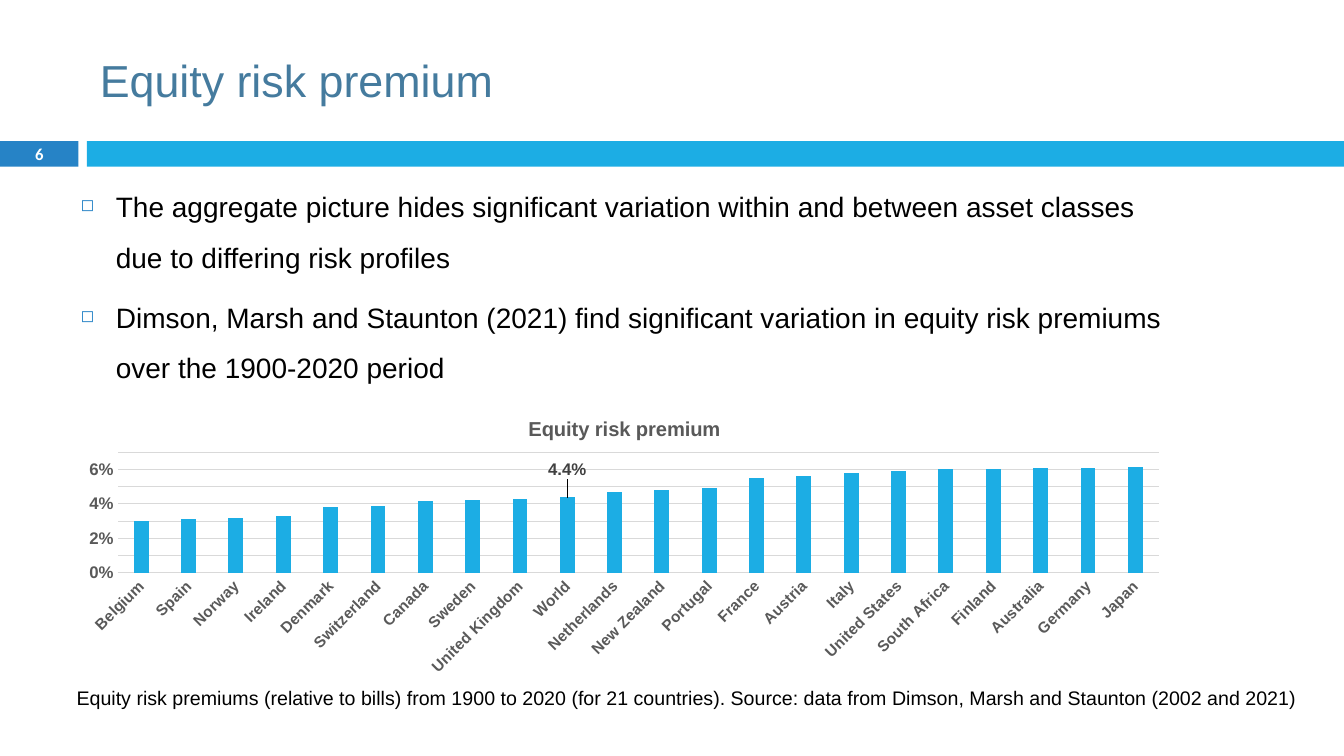
from copy import deepcopy
from lxml.etree import fromstring
from pptx import Presentation
from pptx.chart.data import CategoryChartData
from pptx.dml.color import RGBColor
from pptx.enum.chart import XL_CHART_TYPE as ChartType, XL_LABEL_POSITION as LabelPosition, XL_TICK_MARK as TickMark
from pptx.enum.shapes import MSO_SHAPE as Shape
from pptx.enum.text import MSO_ANCHOR as Anchor, PP_ALIGN as Align
from pptx.oxml import parse_xml
from pptx.oxml.ns import nsdecls, qn
from pptx.util import Cm, Pt

COLORS = {
    "title": "457B9E", "number": "2683C6", "accent": "1CADE4",
    "text": "000000", "white": "FFFFFF", "muted": "595959",
    "label": "404040", "grid": "D9D9D9",
}
BULLETS = [
    "The aggregate picture hides significant variation within and between asset classes due to differing risk profiles",
    "Dimson, Marsh and Staunton (2021) find significant variation in equity risk premiums over the 1900-2020 period",
]
PREMIUMS = {
    "Belgium": 0.03, "Spain": 0.031, "Norway": 0.032, "Ireland": 0.033,
    "Denmark": 0.038, "Switzerland": 0.039, "Canada": 0.042, "Sweden": 0.0421,
    "United Kingdom": 0.043, "World": 0.044, "Netherlands": 0.047,
    "New Zealand": 0.048, "Portugal": 0.049, "France": 0.055, "Austria": 0.056,
    "Italy": 0.058, "United States": 0.059, "South Africa": 0.06,
    "Finland": 0.0605, "Australia": 0.0608, "Germany": 0.061, "Japan": 0.0612,
}
LEADER_LINES = (
    '<c:extLst xmlns:c="http://schemas.openxmlformats.org/drawingml/2006/chart">'
    '<c:ext uri="{CE6537A1-D6FC-4f65-9D91-7224C49458BB}" '
    'xmlns:c15="http://schemas.microsoft.com/office/drawing/2012/chart">'
    '<c15:showLeaderLines val="1"/></c:ext></c:extLst>'
)


class SlideBuilder:
    """Hold the style and the current slide."""

    def __init__(self, presentation, font="Arial"):
        """Add a title-only slide to the presentation."""
        self.slide = presentation.slides.add_slide(presentation.slide_layouts[5])
        self.font = font

    def color(self, name):
        """Return a named colour."""
        return RGBColor.from_string(COLORS[name])

    def style(self, font, size, color, bold=False, name=None):
        """Format a font."""
        font.name = name or self.font
        font.size = Pt(size)
        font.bold = bold
        font.color.rgb = self.color(color)

    def place(self, shape, box):
        """Move and size a shape to a box in centimetres."""
        shape.left, shape.top, shape.width, shape.height = map(Cm, box)

    def title(self, text, box):
        """Fill the title placeholder."""
        title = self.slide.shapes.title
        self.place(title, box)
        title.text_frame.text = text
        title.text_frame.vertical_anchor = Anchor.MIDDLE
        paragraph = title.text_frame.paragraphs[0]
        paragraph.alignment = Align.LEFT
        self.style(paragraph.runs[0].font, 32, "title")

    def bar(self, box, color):
        """Add a plain filled rectangle."""
        shape = self.slide.shapes.add_shape(Shape.RECTANGLE, *map(Cm, box))
        shape.shadow.inherit = False
        shape.fill.solid()
        shape.fill.fore_color.rgb = self.color(color)
        shape.line.fill.background()

    def text(self, text, box, size, color="text", bold=False, name=None,
             align=Align.LEFT, anchor=Anchor.TOP, wrap=True):
        """Add a text box and return its frame."""
        frame = self.slide.shapes.add_textbox(*map(Cm, box)).text_frame
        frame.word_wrap = wrap
        frame.vertical_anchor = anchor
        frame.text = text
        for paragraph in frame.paragraphs:
            paragraph.alignment = align
            self.style(paragraph.runs[0].font, size, color, bold, name)
        return frame

    def bullets(self, items, box):
        """Add a bulleted list."""
        for paragraph in self.text("\n".join(items), box, 20).paragraphs:
            paragraph.line_spacing = 1.5
            paragraph.space_before = Pt(7)
            properties = paragraph._p.get_or_add_pPr()
            properties.set("marL", str(Cm(0.89)))
            properties.set("indent", str(-Cm(0.89)))
            for element in (
                f'<a:buClr {nsdecls("a")}><a:srgbClr val="{COLORS["number"]}"/></a:buClr>',
                f'<a:buSzPct {nsdecls("a")} val="60000"/>',
                f'<a:buChar {nsdecls("a")} char="◻"/>',
            ):
                properties.append(fromstring(element))

    def chart(self, name, values, box, labelled):
        """Add a column chart with one labelled category."""
        data = CategoryChartData(number_format="0.0%")
        data.categories = list(values)
        data.add_series(name, list(values.values()))
        chart = self.slide.shapes.add_chart(
            ChartType.COLUMN_CLUSTERED, *map(Cm, box), data).chart
        self.style(chart.font, 12, "text", True)
        chart.has_legend = False
        chart.has_title = True
        chart.chart_title.text_frame.text = name
        heading = chart.chart_title.text_frame.paragraphs[0].runs[0]
        self.style(heading.font, 14.4, "muted", True)
        plot = chart.plots[0]
        plot.gap_width, plot.overlap, plot.vary_by_categories = 219, -27, False
        series = plot.series[0]
        series.format.fill.solid()
        series.format.fill.fore_color.rgb = self.color("accent")
        self.axes(chart)
        self.layout(chart._chartSpace.chart.plotArea, 0, x=0.045, y=0.18, w=0.935, h=0.432)
        self.point_label(series, list(values).index(labelled))

    def axes(self, chart):
        """Format both axes of a chart."""
        category, value = chart.category_axis, chart.value_axis
        for axis, size in ((category, 11), (value, 12)):
            axis.major_tick_mark = axis.minor_tick_mark = TickMark.NONE
            self.style(axis.tick_labels.font, size, "muted", True)
        category.format.line.color.rgb = self.color("grid")
        category.format.line.width = Pt(0.75)
        category._element.find(qn("c:txPr")).find(qn("a:bodyPr")).set("rot", "-2700000")
        value.format.line.fill.background()
        value.minimum_scale, value.maximum_scale = 0, 0.07
        value.major_unit, value.minor_unit = 0.02, 0.01
        value.tick_labels.number_format = "0%"
        value.tick_labels.number_format_is_linked = False
        value.has_major_gridlines = value.has_minor_gridlines = True
        line = value.major_gridlines.format.line
        line.color.rgb = self.color("grid")
        line.width = Pt(0.75)
        major, minor = (value._element.find(qn(f"c:{kind}Gridlines")) for kind in ("major", "minor"))
        minor.append(deepcopy(major.find(qn("c:spPr"))))

    def layout(self, parent, position, **fractions):
        """Give a chart part a manual layout."""
        inner = '<c:layoutTarget val="inner"/>' if "w" in fractions else ""
        modes = "".join(f'<c:{key}Mode val="edge"/>' for key in "xy") if inner else ""
        sizes = "".join(f'<c:{key} val="{part}"/>' for key, part in fractions.items())
        for previous in parent.findall(qn("c:layout")):
            parent.remove(previous)
        parent.insert(position, parse_xml(
            f'<c:layout {nsdecls("c")}><c:manualLayout>{inner}{modes}{sizes}'
            "</c:manualLayout></c:layout>"))

    def point_label(self, series, index):
        """Label one point above its column with a leader line."""
        label = series.points[index].data_label
        self.style(label.font, 12, "label", True)
        label.position = LabelPosition.OUTSIDE_END
        series.data_labels.show_value = False
        labels = series.data_labels._element
        self.layout(labels.find(qn("c:dLbl")), 1, x=0, y=-0.05)
        labels.append(parse_xml(LEADER_LINES))


def main():
    """Build and save the slide."""
    presentation = Presentation()
    presentation.slide_width, presentation.slide_height = Cm(33.87), Cm(19.05)
    builder = SlideBuilder(presentation)
    builder.bar((0, 3.56, 1.98, 0.64), "number")
    builder.bar((2.19, 3.56, 31.68, 0.64), "accent")
    builder.title("Equity risk premium", (2.26, 0.64, 30.2, 2.74))
    builder.text("6", (0, 3.54, 1.98, 0.68), 11.9, "white", True, "Calibri",
                 Align.CENTER, Anchor.MIDDLE)
    builder.bullets(BULLETS, (1.78, 4.24, 28.07, 13.69))
    builder.text("Equity risk premiums (relative to bills) from 1900 to 2020 (for 21 countries). "
                 "Source: data from Dimson, Marsh and Staunton (2002 and 2021)",
                 (1.68, 17.17, 31.39, 0.86), 14, wrap=False)
    builder.chart("Equity risk premium", PREMIUMS, (1.7, 10.13, 28.07, 7.04), "World")
    presentation.save("out.pptx")


if __name__ == "__main__":
    main()
